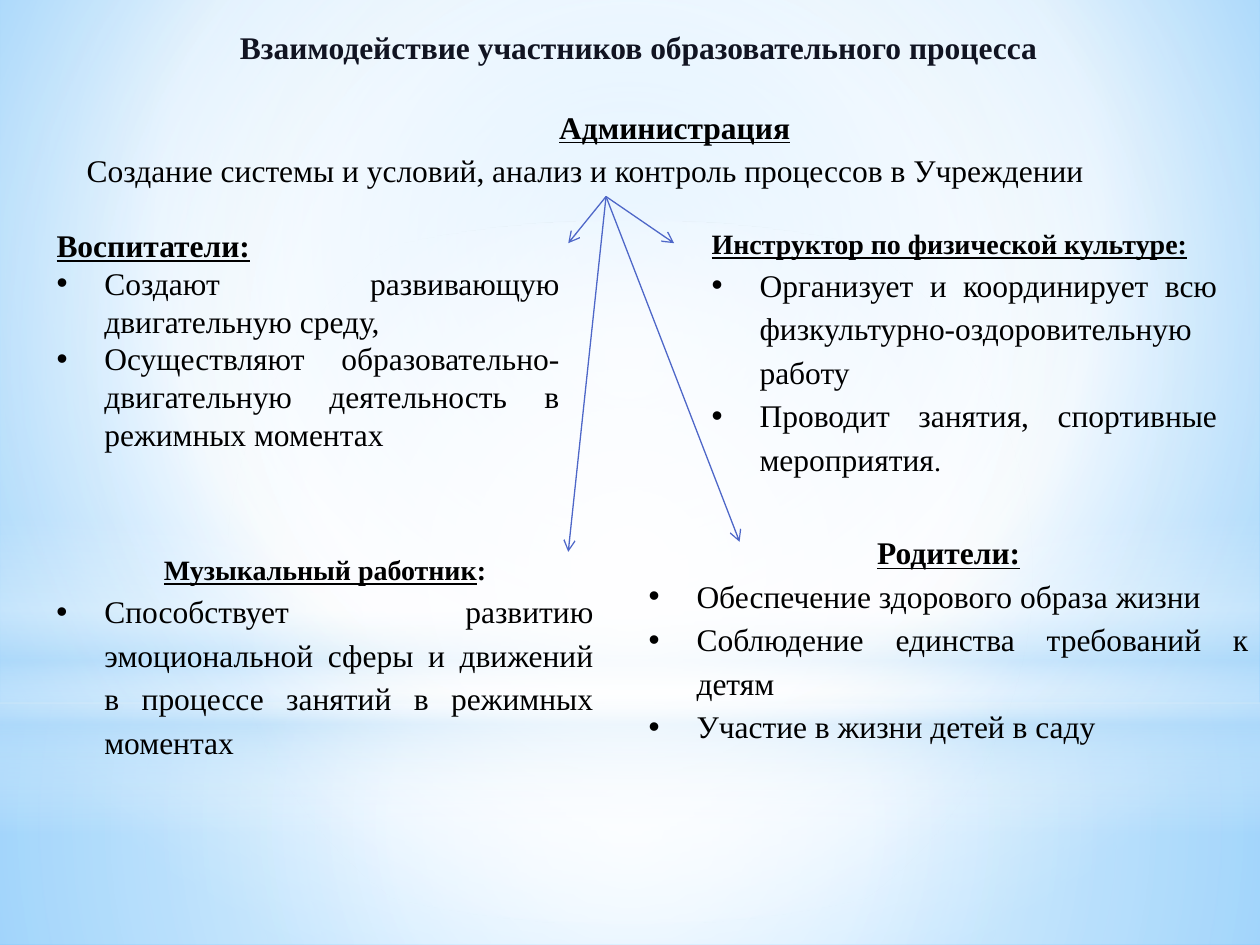
from lxml import etree
from pptx import Presentation
from pptx.dml.color import RGBColor
from pptx.enum import shapes, text
from pptx.oxml import ns
from pptx.util import Emu, Inches, Pt

COLS, ROWS = 100, 75
WIDTH, HEIGHT = Inches(10), Inches(7.5)
INDENT = Inches(0.38)
FONT = "Times New Roman"
COLORS = {"title": "111422", "text": "000000", "arrow": "4E67C8", "white": "FFFFFF",
          "mist": "B4DCFA", "sky": "9ED5FF", "azure": "5BB9FF"}
CENTER = (50, 50, 50, 50)
JUSTIFY = text.PP_ALIGN.JUSTIFY
MIDDLE = text.PP_ALIGN.CENTER


def grid(*lengths):
    """Turn alternating column and row counts into slide lengths."""
    units = (WIDTH / COLS, HEIGHT / ROWS)
    return [Emu(round(n * units[i % 2])) for i, n in enumerate(lengths)]


def add_node(parent, tag, **attrs):
    """Append a DrawingML element with the given attributes."""
    return etree.SubElement(parent, ns.qn(tag), {k: str(v) for k, v in attrs.items()})


def set_gradient(fill, holder, stops, focus=None):
    """Fill with a circular gradient, or a vertical one when there is no focus."""
    fill.solid()
    solid = holder.find(ns.qn("a:solidFill"))
    grad = etree.Element(ns.qn("a:gradFill"), rotWithShape="1")
    gs_lst = add_node(grad, "a:gsLst")
    for pos, color, alpha in stops:
        gs = add_node(gs_lst, "a:gs", pos=pos * 1000)
        clr = add_node(gs, "a:srgbClr", val=COLORS[color])
        add_node(clr, "a:alpha", val=alpha * 1000)
    if focus:
        sides = {side: n * 1000 for side, n in zip("ltrb", focus)}
        add_node(add_node(grad, "a:path", path="circle"), "a:fillToRect", **sides)
    else:
        add_node(grad, "a:lin", ang=90 * 60000, scaled=0)
    holder.replace(solid, grad)


def add_glow(slide, kind, box, stops, focus=None):
    """Add a borderless gradient shape."""
    sp = slide.shapes.add_shape(kind, *grid(*box))
    sp.shadow.inherit = False
    sp.line.fill.background()
    set_gradient(sp.fill, sp.element.spPr, stops, focus)


def write(p, words, size=18, bold=False, underline=False, color="text"):
    """Add one formatted run to a paragraph."""
    r = p.add_run()
    r.text = words
    r.font.name, r.font.size = FONT, Pt(size)
    r.font.bold, r.font.underline = bold, underline
    r.font.color.rgb = RGBColor.from_string(COLORS[color])


def add_box(slide, box):
    """Add a wrapping text box and return its text frame."""
    tf = slide.shapes.add_textbox(*grid(*box)).text_frame
    tf.word_wrap = True
    return tf


def add_heading(tf, words, align=None, **fmt):
    """Write the bold first paragraph and return it."""
    p = tf.paragraphs[0]
    p.alignment, p.line_spacing = align, 1.15
    write(p, words, bold=True, **fmt)
    return p


def add_item(tf, words, spacing=1.15, bullet=True):
    """Add a justified paragraph, bulleted by default, and return it."""
    p = tf.add_paragraph()
    p.alignment, p.line_spacing = JUSTIFY, spacing
    if bullet:
        pPr = p._p.get_or_add_pPr()
        pPr.set("marL", str(INDENT))
        pPr.set("indent", str(-INDENT))
        add_node(pPr, "a:buFont", typeface="Arial")
        add_node(pPr, "a:buChar", char="•")
    write(p, words)
    return p


def add_arrow(slide, start, end):
    """Draw a thin arrow between two grid points."""
    line = slide.shapes.add_connector(shapes.MSO_CONNECTOR.STRAIGHT, *grid(*start, *end))
    line.line.color.rgb = RGBColor.from_string(COLORS["arrow"])
    line.line.width = Pt(0.75)
    add_node(line.line._get_or_add_ln(), "a:tailEnd", type="arrow")
    add_node(line.element.spPr, "a:effectLst")


def add_backdrop(slide):
    """Paint the sky background and its layers of light."""
    fill = slide.background.fill
    fill.solid()
    set_gradient(fill, slide.element.find(".//" + ns.qn("p:bgPr")),
                 [(0, "sky", 100), (60, "white", 100), (100, "azure", 100)], (20, 10, 20, 60))
    rect, oval = shapes.MSO_SHAPE.RECTANGLE, shapes.MSO_SHAPE.OVAL
    horizon = 55.8
    add_glow(slide, rect, (0, horizon, COLS, ROWS - horizon),
             [(0, "white", 91), (37, "white", 76), (100, "mist", 79)], CENTER)
    add_glow(slide, rect, (0, 0, COLS, horizon),
             [(0, "white", 89), (48, "white", 62), (100, "mist", 79)], CENTER)
    add_glow(slide, rect, (0, 41.2, COLS, 25),
             [(0, "white", 0), (29, "white", 30), (45, "mist", 40),
              (55, "white", 26), (65, "mist", 60), (100, "white", 0)])
    add_glow(slide, oval, (0, 17.5, COLS, horizon),
             [(0, "white", 100), (56, "white", 0)], CENTER)


def add_roles(slide):
    """Write the title and the duties of each participant."""
    tf = add_box(slide, (15.1, 1.3, 71.2, 6.3))
    add_heading(tf, "Взаимодействие участников образовательного процесса", MIDDLE, color="title")

    tf = add_box(slide, (3.5, 17, 41.9, 19.6))
    add_heading(tf, "Воспитатели:", underline=True)
    add_item(tf, "Создают развивающую двигательную среду,", spacing=1.0)
    add_item(tf, "Осуществляют образовательно-двигательную деятельность в режимных моментах",
             spacing=1.0)

    tf = add_box(slide, (5.9, 7.6, 95.3, 8))
    add_heading(tf, "Администрация", MIDDLE, underline=True)
    add_item(tf, "Создание системы и условий, анализ и контроль процессов в Учреждении",
             bullet=False)

    tf = add_box(slide, (55.5, 17.1, 42.1, 21.5))
    add_heading(tf, "Инструктор по физической культуре:", JUSTIFY, size=16, underline=True)
    add_item(tf, "Организует и координирует всю физкультурно-оздоровительную работу")
    write(add_item(tf, "Проводит занятия, спортивные мероприятия"), ".", size=16)

    tf = add_box(slide, (3.5, 43, 44.6, 18))
    p = add_heading(tf, "Музыкальный работник", MIDDLE, size=16, underline=True)
    write(p, ":", size=16, bold=True)
    add_item(tf, "Способствует развитию эмоциональной сферы и движений "
                 "в процессе занятий в режимных моментах")

    tf = add_box(slide, (50.5, 41.4, 49.6, 18.4))
    add_heading(tf, "Родители:", MIDDLE, underline=True)
    for duty in ("Обеспечение здорового образа жизни",
                 "Соблюдение единства требований к детям",
                 "Участие в жизни детей в саду"):
        add_item(tf, duty)


def main():
    """Build and save the slide."""
    prs = Presentation()
    prs.slide_width, prs.slide_height = WIDTH, HEIGHT
    slide = prs.slides.add_slide(prs.slide_layouts[6])
    add_backdrop(slide)
    add_roles(slide)
    for end in ((45.1, 19.3), (53.5, 19.3), (58.7, 43), (45.1, 43.8)):
        add_arrow(slide, (48.1, 15.6), end)
    prs.save("out.pptx")


if __name__ == "__main__":
    main()
